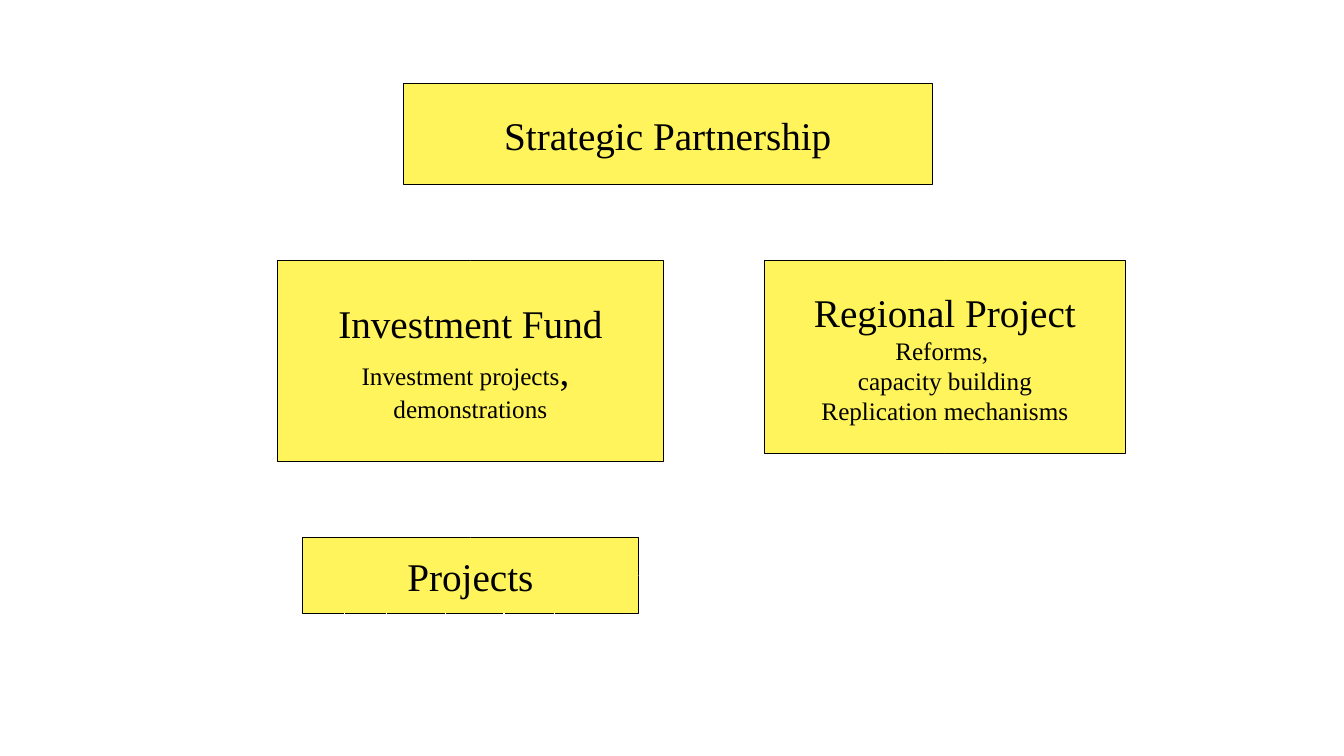
from pptx import Presentation
from pptx.dml.color import RGBColor
from pptx.enum.shapes import MSO_CONNECTOR as CONN, MSO_SHAPE as SHAPE
from pptx.enum.text import MSO_ANCHOR as ANCHOR, PP_ALIGN as ALIGN
from pptx.oxml.ns import qn
from pptx.util import Pt
from lxml import etree

YELLOW = RGBColor(0xFF, 0xF4, 0x5B)
BLACK = RGBColor(0, 0, 0)
WHITE = RGBColor(0xFF, 0xFF, 0xFF)
FONT = "Times New Roman"
HEAD, BODY = 28, 18
TOP, LEFT, BOTTOM, RIGHT = 0, 1, 2, 3


def add_box(slide, box, paragraphs):
    """Draw a yellow box; each paragraph is a list of (text, size) runs."""
    sp = slide.shapes.add_shape(SHAPE.RECTANGLE, *map(Pt, box))
    sp.shadow.inherit = False
    sp.fill.solid()
    sp.fill.fore_color.rgb = YELLOW
    sp.line.color.rgb = BLACK
    sp.line.width = Pt(0.75)
    tf = sp.text_frame
    tf.word_wrap = False
    tf.vertical_anchor = ANCHOR.MIDDLE
    for i, runs in enumerate(paragraphs):
        p = tf.add_paragraph() if i else tf.paragraphs[0]
        p.alignment = ALIGN.CENTER
        for text, size in runs:
            r = p.add_run()
            r.text = text
            r.font.name = FONT
            r.font.size = Pt(size)
            r.font.color.rgb = BLACK
    return sp


def style_arrow(c, width=0.75, ends=("tailEnd",)):
    c.line.color.rgb = WHITE
    c.line.width = Pt(width)
    ln = c.line._get_or_add_ln()
    for end in ends:
        etree.SubElement(ln, qn("a:" + end), type="triangle")
    etree.SubElement(c._element.spPr, qn("a:effectLst"))


def join(slide, kind, start, start_side, end, end_side):
    c = slide.shapes.add_connector(kind, 0, 0, 0, 0)
    c.begin_connect(start, start_side)
    c.end_connect(end, end_side)
    return c


def leave_downwards(c, preset="bentConnector3"):
    """Turn an elbow by a quarter so that its first leg runs down."""
    x1, y1, x2, y2 = c.begin_x, c.begin_y, c.end_x, c.end_y
    w, h = abs(y2 - y1), abs(x2 - x1)
    c.left, c.top = (x1 + x2 - w) // 2, (y1 + y2 - h) // 2
    c.width, c.height = w, h
    to_right = x2 > x1
    xfrm = c._element.spPr.find(qn("a:xfrm"))
    xfrm.set("rot", str((270 if to_right else 90) * 60000))
    xfrm.set("flipH", "1" if to_right else "0")
    xfrm.set("flipV", "0")
    c._element.spPr.find(qn("a:prstGeom")).set("prst", preset)


def add_project_arrows(slide, projects, offsets, length):
    y = projects.top + projects.height
    for offset in offsets:
        x = projects.left + Pt(offset)
        style_arrow(slide.shapes.add_connector(CONN.STRAIGHT, x, y, x, y + Pt(length)))


def build_partnership_slide(prs):
    slide = prs.slides.add_slide(prs.slide_layouts[6])
    partnership = add_box(slide, (288, 60, 378, 72), [[("Strategic Partnership", HEAD)]])
    fund = add_box(slide, (198, 186, 276, 144), [
        [("Investment Fund", HEAD)],
        [("Investment projects", BODY), (", ", HEAD)],
        [("demonstrations", BODY)],
    ])
    regional = add_box(slide, (546, 186, 258, 138), [
        [("Regional Project", HEAD)],
        [("Reforms, ", BODY)],
        [("capacity building", BODY)],
        [("Replication mechanisms", BODY)],
    ])
    projects = add_box(slide, (216, 384, 240, 54), [[("Projects", HEAD)]])

    for target, width in ((fund, 1), (regional, 0.75)):
        c = join(slide, CONN.ELBOW, partnership, BOTTOM, target, TOP)
        leave_downwards(c)
        style_arrow(c, width)
    style_arrow(join(slide, CONN.STRAIGHT, fund, BOTTOM, projects, TOP))
    c = join(slide, CONN.ELBOW, regional, BOTTOM, projects, RIGHT)
    leave_downwards(c, "bentConnector2")
    style_arrow(c, ends=("headEnd", "tailEnd"))
    add_project_arrows(slide, projects, (30, 60, 102, 144, 180), 30)


def main():
    prs = Presentation()
    prs.slide_width, prs.slide_height = Pt(960), Pt(540)
    build_partnership_slide(prs)
    prs.save("out.pptx")


if __name__ == "__main__":
    main()
